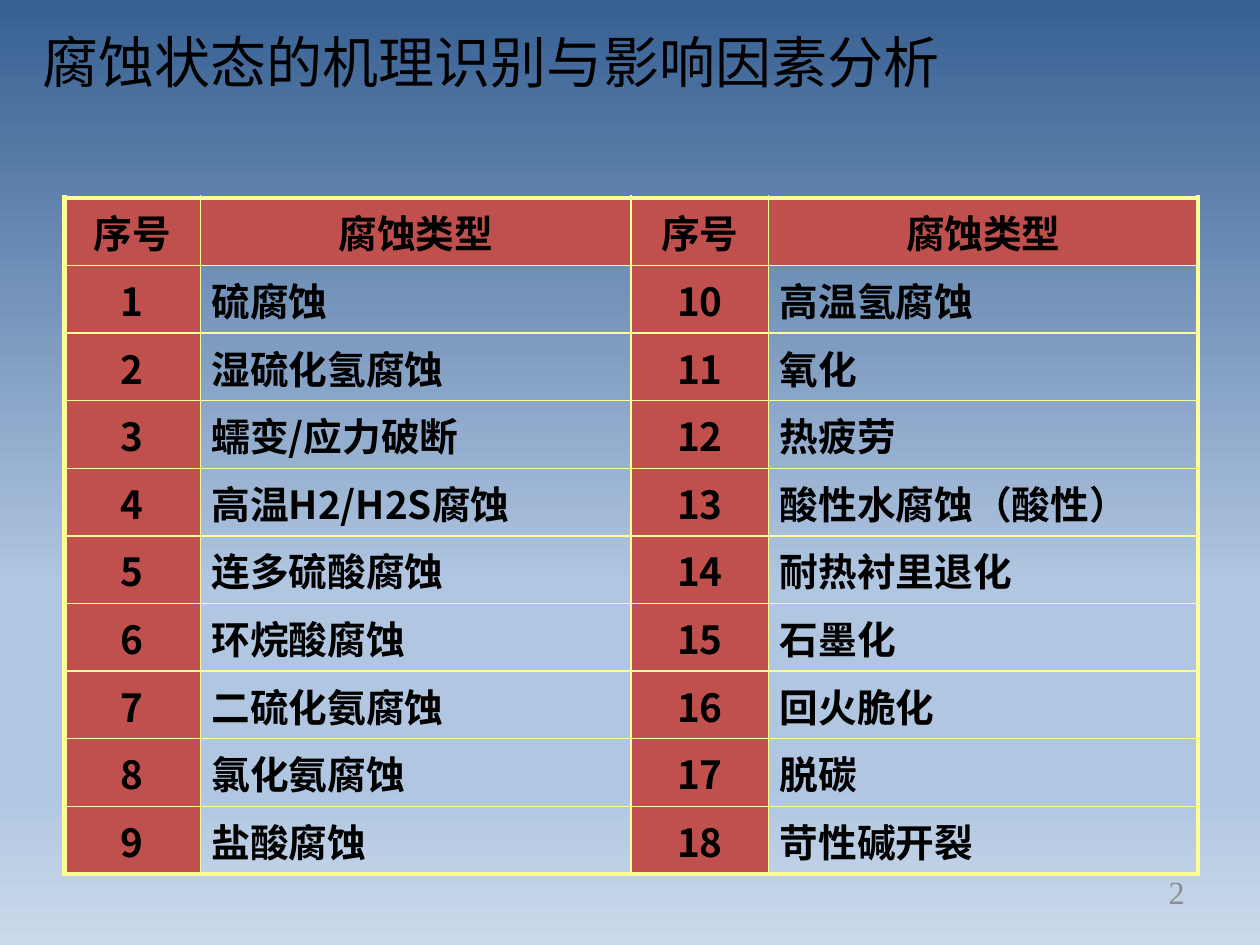
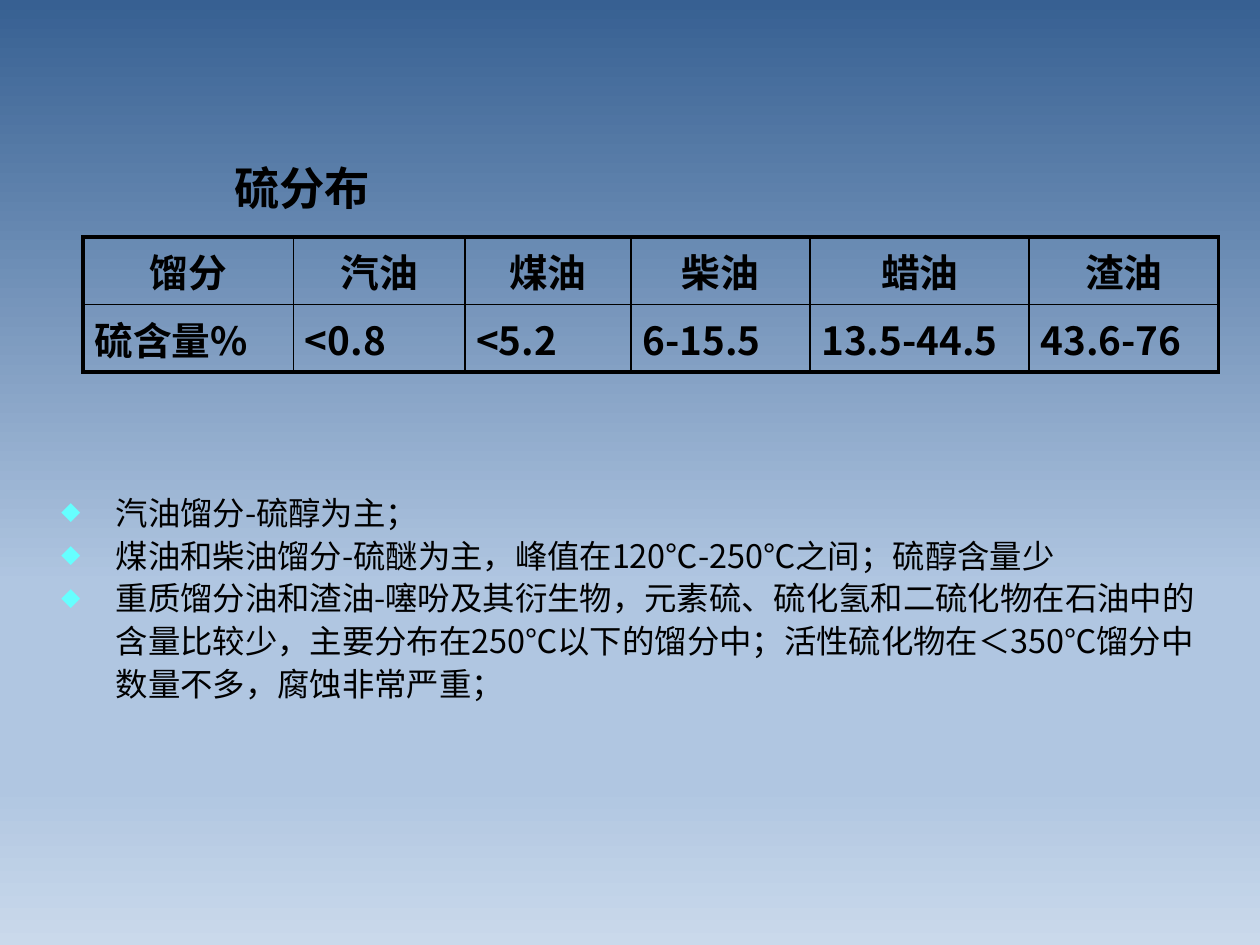
from pptx import Presentation
from pptx import util as u
from pptx.dml import color
from pptx.enum import text
from pptx.oxml import ns, xmlchemy

COLOURS = {
    "ink": "000000",
    "number": "8C8C8C",
    "label": "C0504D",
    "yellow": "FFFF99",
    "bullet": "66FFFF",
}
BACKGROUND = [(0, "376092"), (62, "B0C6E1"), (83, "B0C6E1"), (100, "CAD9EB")]
SANS = "Noto Sans CJK SC"
LEFT, CENTER, RIGHT = text.PP_ALIGN.LEFT, text.PP_ALIGN.CENTER, text.PP_ALIGN.RIGHT
ROW_HEIGHT = 5.37 / 10  # ten rows fill the tall table
INNER_LINE = 1

CORROSION_TYPES = [
    "硫腐蚀", "湿硫化氢腐蚀", "蠕变/应力破断", "高温H2/H2S腐蚀", "连多硫酸腐蚀",
    "环烷酸腐蚀", "二硫化氨腐蚀", "氯化氨腐蚀", "盐酸腐蚀",
    "高温氢腐蚀", "氧化", "热疲劳", "酸性水腐蚀（酸性）", "耐热衬里退化",
    "石墨化", "回火脆化", "脱碳", "苛性碱开裂",
]
SULFUR_ROWS = [
    ["馏分", "汽油", "煤油", "柴油", "蜡油", "渣油"],
    ["硫含量%", "<0.8", "<5.2", "6-15.5", "13.5-44.5", "43.6-76"],
]
SULFUR_NOTES = [
    "汽油馏分-硫醇为主；",
    "煤油和柴油馏分-硫醚为主，峰值在120℃-250℃之间；硫醇含量少",
    "重质馏分油和渣油-噻吩及其衍生物，元素硫、硫化氢和二硫化物在石油中的"
    "含量比较少，主要分布在250℃以下的馏分中；活性硫化物在＜350℃馏分"
    "中数量不多，腐蚀非常严重；",
]


# Shared helpers
def add_element(parent, tag, **attributes):
    element = xmlchemy.OxmlElement(tag)
    for name, value in attributes.items():
        element.set(name, str(value))
    parent.append(element)
    return element


def add_span(para, words, size, font=SANS, colour="ink", bold=False):
    span = para.add_run()
    span.text = words
    span.font.size = u.Pt(size)
    span.font.bold = bold
    span.font.color.rgb = color.RGBColor.from_string(COLOURS[colour])
    span.font.name = font
    add_element(span.font._element, "a:ea", typeface=SANS)


def add_text_box(page, box):
    frame = page.shapes.add_textbox(*map(u.Inches, box)).text_frame
    frame.word_wrap = True
    frame.vertical_anchor = text.MSO_ANCHOR.MIDDLE
    return frame


def add_line_of_text(page, box, words, size, align=LEFT, **style):
    para = add_text_box(page, box).paragraphs[0]
    para.alignment = align
    add_span(para, words, size, **style)


def add_page(deck):
    page = deck.slides.add_slide(deck.slide_layouts[6])
    page.background.fill.gradient()
    gradient = page.element.xpath(".//a:gradFill")[0]
    stops = gradient.find(ns.qn("a:gsLst"))
    for stop in list(stops):
        stops.remove(stop)
    for position, colour in BACKGROUND:
        stop = add_element(stops, "a:gs", pos=position * 1000)
        add_element(stop, "a:srgbClr", val=colour)
    direction = gradient.find(ns.qn("a:lin"))
    direction.set("ang", str(90 * 60000))
    return page


# Tables
def set_border(cell, side, colour, width):
    line = add_element(cell._tc.get_or_add_tcPr(), f"a:ln{side}", w=int(u.Pt(width)))
    fill = add_element(line, "a:solidFill")
    add_element(fill, "a:srgbClr", val=COLOURS[colour])


def add_grid(page, left, top, widths, rows, line_colour, outer_line,
             is_centered, is_label):
    box = (left, top, sum(widths), ROW_HEIGHT * len(rows))
    table = page.shapes.add_table(len(rows), len(widths), *map(u.Inches, box)).table
    table.first_row = table.horz_banding = False
    for column, width in zip(table.columns, widths):
        column.width = u.Inches(width)
    last_row, last_column = len(rows) - 1, len(widths) - 1
    for r, row in enumerate(rows):
        for c, words in enumerate(row):
            cell = table.cell(r, c)
            cell.margin_left = cell.margin_right = u.Inches(0.09)
            edges = {"L": c == 0, "R": c == last_column,
                     "T": r == 0, "B": r == last_row}
            for side, is_outer in edges.items():
                width = outer_line if is_outer else INNER_LINE
                set_border(cell, side, line_colour, width)
            if is_label(r, c):
                cell.fill.solid()
                cell.fill.fore_color.rgb = color.RGBColor.from_string(COLOURS["label"])
            else:
                cell.fill.background()
            para = cell.text_frame.paragraphs[0]
            para.alignment = CENTER if is_centered(r, c) else LEFT
            add_span(para, words, 22.1, bold=True)


# Bulleted notes
def add_notes(page, box, notes):
    frame = add_text_box(page, box)
    frame.margin_right = u.Inches(0.15)
    frame.margin_bottom = u.Inches(0.68)
    for index, note in enumerate(notes):
        para = frame.add_paragraph() if index else frame.paragraphs[0]
        properties = para._p.get_or_add_pPr()
        properties.set("marL", str(u.Inches(0.49)))
        properties.set("indent", str(-u.Inches(0.43)))
        bullet_colour = add_element(properties, "a:buClr")
        add_element(bullet_colour, "a:srgbClr", val=COLOURS["bullet"])
        add_element(properties, "a:buSzPct", val=60000)
        add_element(properties, "a:buFont", typeface=SANS)
        add_element(properties, "a:buChar", char="◆")
        para.line_spacing = 1.1
        add_span(para, note, 18.5)


# Slides
def build_corrosion_page(deck):
    page = add_page(deck)
    add_line_of_text(page, (7.17, 6.83, 2.33, 0.5), "2", 18.4, RIGHT,
                     font="Times New Roman", colour="number")
    add_line_of_text(page, (-0.35, 0.16, 8.5, 0.65),
                     "腐蚀状态的机理识别与影响因素分析", 32, CENTER)
    half = len(CORROSION_TYPES) // 2
    rows = [["序号", "腐蚀类型"] * 2]
    for i in range(half):
        rows.append([str(i + 1), CORROSION_TYPES[i],
                     str(i + 1 + half), CORROSION_TYPES[i + half]])

    def is_label(r, c):
        return r == 0 or c % 2 == 0

    add_grid(page, 0.51, 1.57, [1.08, 3.42, 1.09, 3.41], rows, "yellow", 3,
             is_centered=is_label, is_label=is_label)


def build_sulfur_page(deck):
    page = add_page(deck)
    add_line_of_text(page, (1.76, 1.09, 2.66, 0.79), "硫分布", 25.9,
                     font="Calibri", bold=True)
    add_grid(page, 0.66, 1.88, [1.67, 1.36, 1.32, 1.42, 1.74, 1.5], SULFUR_ROWS,
             "ink", 2.25, is_centered=lambda r, c: r == 0,
             is_label=lambda r, c: False)
    add_notes(page, (0.33, 3.2, 9.49, 3.69), SULFUR_NOTES)


def main():
    deck = Presentation()
    deck.slide_width, deck.slide_height = u.Inches(10), u.Inches(7.5)
    build_corrosion_page(deck)
    build_sulfur_page(deck)
    deck.save("out.pptx")


if __name__ == "__main__":
    main()
